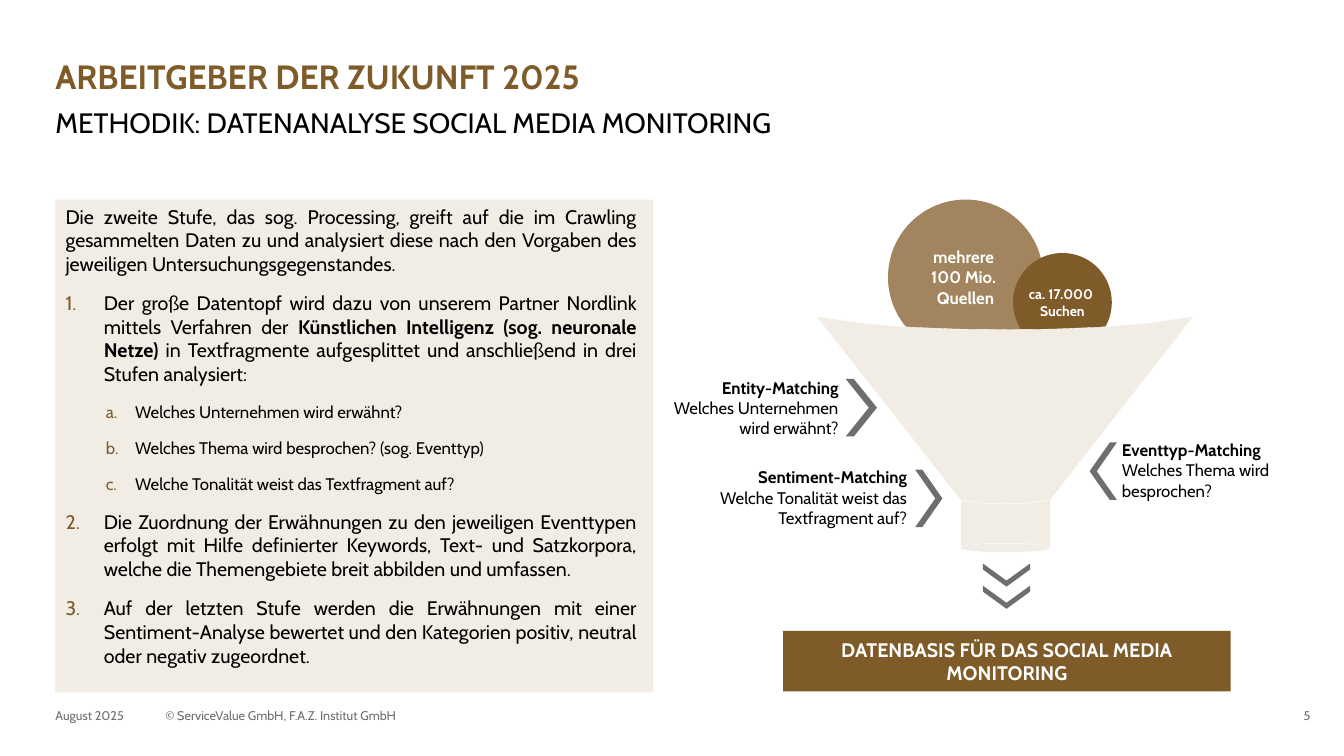
from lxml.etree import SubElement
from pptx import Presentation
from pptx.dml.color import RGBColor
from pptx.enum.shapes import MSO_SHAPE
from pptx.enum.text import MSO_ANCHOR, MSO_AUTO_SIZE, PP_ALIGN
from pptx.oxml.ns import qn
from pptx.util import Inches, Pt

# Content
FONT = "Cabin"
BROWN, TAN, BEIGE = "7E5B29", "A2855E", "F1ECE4"
GREY, BLACK, WHITE = "6D6E71", "000000", "FFFFFF"

TITLE = "ARBEITGEBER DER ZUKUNFT 2025"
SUBTITLE = "METHODIK: DATENANALYSE SOCIAL MEDIA MONITORING"
RESULT = "DATENBASIS FÜR DAS SOCIAL MEDIA MONITORING"

# Level 0 is plain, 1 is numbered, 2 is lettered; every second part is bold
BODY = [
    (0, ["Die zweite Stufe, das sog. Processing, greift auf die im Crawling gesammelten "
         "Daten zu und analysiert diese nach den Vorgaben des jeweiligen "
         "Untersuchungsgegenstandes."]),
    (1, ["Der große Datentopf wird dazu von unserem Partner Nordlink mittels Verfahren der ",
         "Künstlichen Intelligenz (sog. neuronale Netze) ",
         "in Textfragmente aufgesplittet und anschließend in drei Stufen analysiert:"]),
    (2, ["Welches Unternehmen wird erwähnt?"]),
    (2, ["Welches Thema wird besprochen? (sog. Eventtyp)"]),
    (2, ["Welche Tonalität weist das Textfragment auf?"]),
    (1, ["Die Zuordnung der Erwähnungen zu den jeweiligen Eventtypen erfolgt mit Hilfe "
         "definierter Keywords, Text- und Satzkorpora, welche die Themengebiete breit "
         "abbilden und umfassen."]),
    (1, ["Auf der letzten Stufe werden die Erwähnungen mit einer Sentiment-Analyse bewertet "
         "und den Kategorien positiv, neutral oder negativ zugeordnet."]),
]
# Per level: text size, indent, hanging, numbering
LEVELS = [
    (14, 0, 0, None),
    (14, 0.38, 0.38, "arabicPeriod"),
    (12, 0.69, 0.29, "alphaLcPeriod"),
]
# Text, left, top, diameter, colour, text size
SOURCES = [
    ("mehrere \v100 Mio. \nQuellen", 8.81, 1.98, 1.54, TAN, 12),
    ("ca. 17.000 \vSuchen", 10.05, 2.51, 0.98, BROWN, 10),
]
# Heading, question, box, alignment
MATCHINGS = [
    ("Entity-Matching", "Welches Unternehmen wird erwähnt?",
     (6.52, 3.74, 1.8, 0.61), PP_ALIGN.RIGHT),
    ("Sentiment-Matching", "Welche Tonalität weist das Textfragment auf?",
     (7, 4.63, 2, 0.61), PP_ALIGN.RIGHT),
    ("Eventtyp-Matching", "Welches Thema wird besprochen?",
     (11.13, 4.36, 1.65, 0.61), PP_ALIGN.LEFT),
]
# Box, rotation
CHEVRONS = [
    ((8.39, 3.76, 0.31, 0.57), 0),
    ((9.08, 4.66, 0.27, 0.57), 0),
    ((10.81, 4.39, 0.27, 0.57), 180),
    ((9.87, 5.47, 0.23, 0.47), 90),
    ((9.87, 5.69, 0.23, 0.47), 90),
]
FOOTER = [
    ("August 2025", 0.55, 1.02, PP_ALIGN.LEFT),
    ("© ServiceValue GmbH, F.A.Z. Institut GmbH", 1.64, 4.5, PP_ALIGN.LEFT),
    ("5", 12.7, 0.3, PP_ALIGN.RIGHT),
]


def color(value):
    return RGBColor.from_string(value)


def place(shape, *box):
    shape.left, shape.top, shape.width, shape.height = map(Inches, box)


def paint(shape, fill, outline=None):
    shape.shadow.inherit = False
    shape.fill.solid()
    shape.fill.fore_color.rgb = color(fill)
    if outline:
        shape.line.color.rgb = color(outline)
        shape.line.width = Pt(0.25)
    else:
        shape.line.fill.background()


def set_frame(frame, anchor, insets=(0, 0, 0, 0), wrap=True):
    frame.auto_size = MSO_AUTO_SIZE.NONE
    frame.word_wrap = wrap
    frame.vertical_anchor = anchor
    (frame.margin_left, frame.margin_top,
     frame.margin_right, frame.margin_bottom) = map(Inches, insets)


def format_run(span, size, hue, bold=False):
    span.font.name = FONT
    span.font.size = Pt(size)
    span.font.bold = bold
    span.font.color.rgb = color(hue)


def write(shape, text, size, hue, bold=False, align=PP_ALIGN.LEFT,
          anchor=MSO_ANCHOR.MIDDLE, wrap=True):
    frame = shape.text_frame
    set_frame(frame, anchor, wrap=wrap)
    frame.text = text
    for para in frame.paragraphs:
        para.alignment = align
        for span in para.runs:
            format_run(span, size, hue, bold)
    return frame.paragraphs[0]


def add_shape(kind, *box):
    return page.shapes.add_shape(kind, *map(Inches, box))


def add_text_box(*box):
    return page.shapes.add_textbox(*map(Inches, box))


def number(para, indent, hanging, scheme):
    props = para._p.get_or_add_pPr()
    props.set("marL", str(Inches(indent)))
    props.set("indent", str(-Inches(hanging)))
    if scheme is None:
        SubElement(props, qn("a:buNone"))
        return
    SubElement(SubElement(props, qn("a:buClr")), qn("a:srgbClr"), val=BROWN)
    SubElement(props, qn("a:buFont"), typeface=FONT)
    SubElement(props, qn("a:buAutoNum"), type=scheme)


def sag(left, right, top, depth, steps):
    """Points of a hanging rim, from left to right."""
    middle, half = (left + right) / 2, (right - left) / 2
    offsets = [step / steps for step in range(-steps, steps + 1)]
    return [(middle + half * x, top + depth * (1 - abs(x) ** 2.5)) for x in offsets]


def add_outline(points):
    start, *rest = [(Inches(x), Inches(y)) for x, y in points]
    builder = page.shapes.build_freeform(*start)
    builder.add_line_segments(rest, close=True)
    paint(builder.convert_to_shape(), BEIGE, WHITE)


deck = Presentation()
deck.slide_width, deck.slide_height = Inches(40 / 3), Inches(7.5)
page = deck.slides.add_slide(deck.slide_layouts[1])

# Title and subtitle
title = page.shapes.title
place(title, 0.55, 0.2, 8.9, 0.76)
write(title, TITLE, 24, BROWN, True, anchor=MSO_ANCHOR.BOTTOM).line_spacing = 0.9
subtitle = add_text_box(0.55, 1.08, 8.9, 0.34)
write(subtitle, SUBTITLE, 20, BLACK, anchor=MSO_ANCHOR.TOP).line_spacing = 0.9

# Numbered explanation
body = page.placeholders[1]
place(body, 0.55, 1.98, 5.93, 4.89)
body.fill.solid()
body.fill.fore_color.rgb = color(BEIGE)
set_frame(body.text_frame, MSO_ANCHOR.TOP, (0.1, 0.05, 0.16, 0.05))
for index, (level, parts) in enumerate(BODY):
    para = body.text_frame.paragraphs[0] if index == 0 else body.text_frame.add_paragraph()
    size, *numbering = LEVELS[level]
    para.level = level
    number(para, *numbering)
    para.alignment = PP_ALIGN.JUSTIFY
    para.space_before = Pt(6 if index else 0)
    para.space_after = Pt(5.4)
    for position, part in enumerate(parts):
        span = para.add_run()
        span.text = part
        format_run(span, size, BLACK, position % 2 == 1)

# Sources dropping into the funnel
for text, left, top, diameter, fill, size in SOURCES:
    circle = add_shape(MSO_SHAPE.OVAL, left, top, diameter, diameter)
    paint(circle, fill)
    write(circle, text, size, WHITE, True, PP_ALIGN.CENTER, wrap=False)

# Funnel: cone, spout and its opening
neck = sag(9.53, 10.42, 4.96, 0.04, 2)
add_outline(sag(8.1, 11.84, 3.14, 0.13, 4) + neck[::-1])
add_outline(neck + sag(9.53, 10.42, 5.43, -0.04, 2)[::-1])
paint(add_shape(MSO_SHAPE.OVAL, 9.53, 5.39, 0.89, 0.09), BEIGE, WHITE)

# Matching steps
for box, rotation in CHEVRONS:
    chevron = add_shape(MSO_SHAPE.CHEVRON, *box)
    chevron.adjustments[0] = 0.74
    chevron.rotation = rotation
    paint(chevron, GREY)
for heading, question, box, align in MATCHINGS:
    para = write(add_text_box(*box), f"{heading}\v{question}", 12, BLACK, align=align)
    para.runs[0].font.bold = True

# Result bar
result = add_shape(MSO_SHAPE.RECTANGLE, 7.77, 6.26, 4.44, 0.6)
paint(result, BROWN)
write(result, RESULT, 14, WHITE, True, PP_ALIGN.CENTER)

# Footer
for text, left, width, align in FOOTER:
    write(add_text_box(left, 7.03, width, 0.13), text, 9, GREY, align=align)

deck.save("out.pptx")
